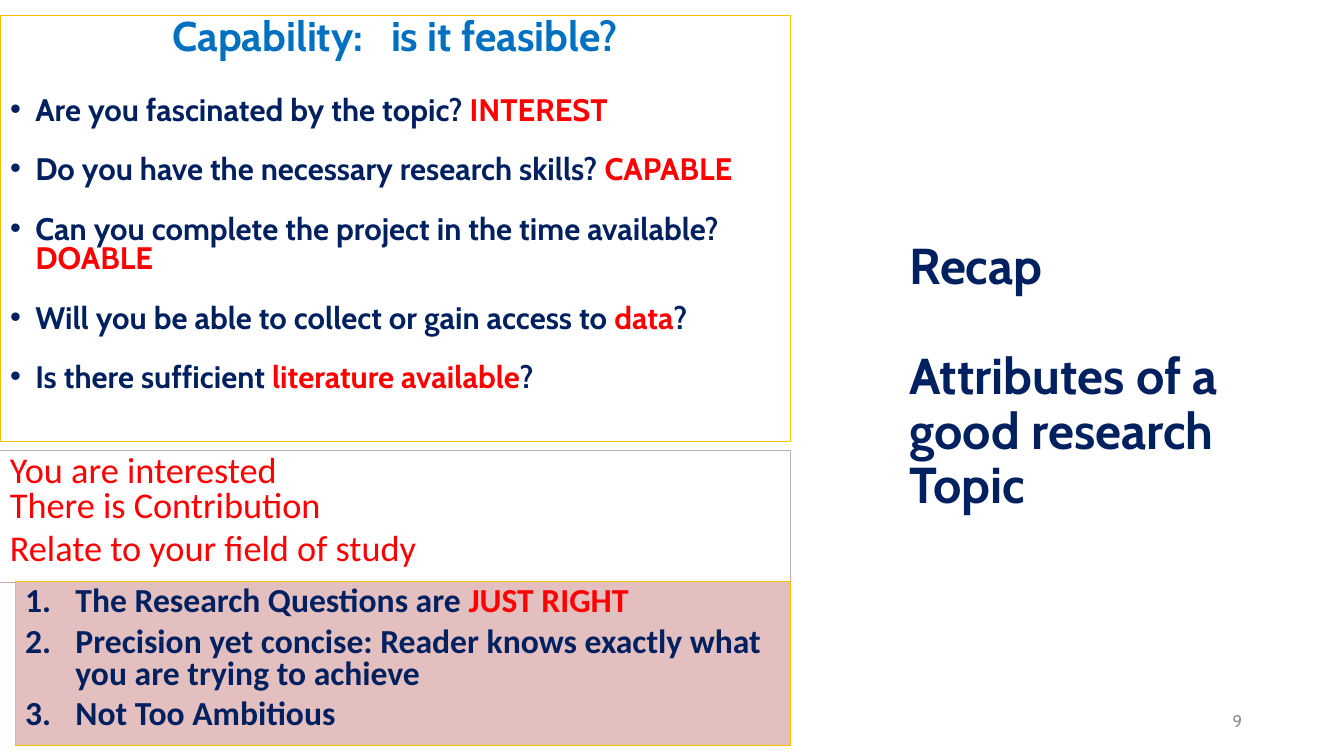
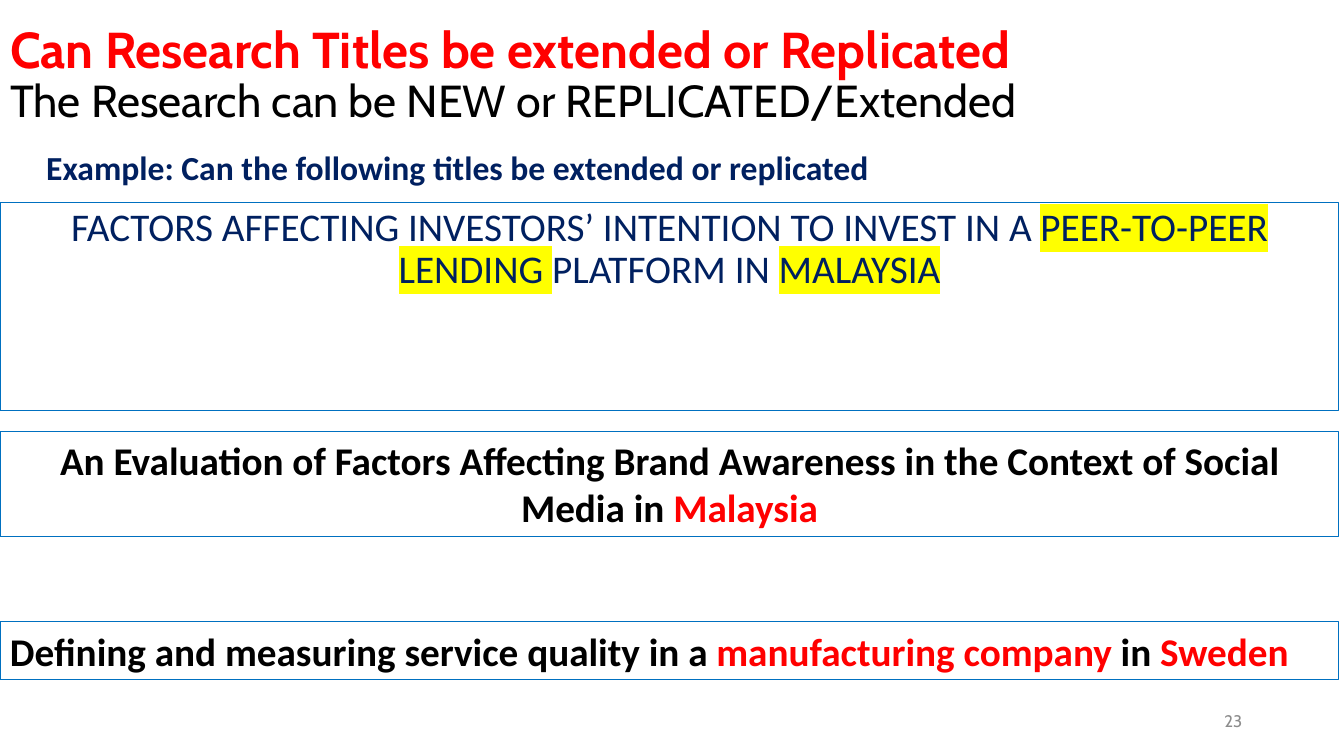
import pptx
import pptx.util
import pptx.dml.color
import pptx.enum.text
import pptx.oxml.ns
import lxml.etree

Inches = pptx.util.Inches
Pt = pptx.util.Pt
RGBColor = pptx.dml.color.RGBColor
Align = pptx.enum.text.PP_ALIGN
Anchor = pptx.enum.text.MSO_ANCHOR

NAVY = RGBColor(0x00, 0x20, 0x60)
BLUE = RGBColor(0x00, 0x70, 0xC0)
RED = RGBColor(0xFF, 0x00, 0x00)
BLACK = RGBColor(0x00, 0x00, 0x00)
WHITE = RGBColor(0xFF, 0xFF, 0xFF)
GOLD = RGBColor(0xFF, 0xC0, 0x00)
MAUVE = RGBColor(0xC6, 0xAD, 0xB0)
PINK = RGBColor(0xE3, 0xC0, 0xBF)
GRAY = RGBColor(0x8C, 0x8C, 0x8C)
YELLOW = "FFFF00"
HEAD = "Cabin"
TEXT = "Calibri"


def tag(parent, name, **attrs):
    return lxml.etree.SubElement(parent, pptx.oxml.ns.qn("a:" + name), **attrs)


def bullet(props, kind, hang):
    props.set("marL", str(Inches(hang)))
    props.set("indent", str(-Inches(hang)))
    if kind == "dot":
        tag(props, "buFont", typeface="Arial")
        tag(props, "buChar", char="•")
    elif kind == "num":
        tag(props, "buFont", typeface="+mj-lt")
        tag(props, "buAutoNum", type="arabicPeriod")
    else:
        tag(props, "buNone")


def write(frame, runs, size, color, font=TEXT, bold=False, align=Align.LEFT,
          line=1.0, before=0, after=0, kind=None, hang=0):
    first = frame.paragraphs[0]
    para = frame.add_paragraph() if first.runs else first
    bullet(para._p.get_or_add_pPr(), kind, hang)
    para.alignment = align
    para.line_spacing = line
    para.space_before = Pt(before)
    para.space_after = Pt(after)
    para.font.name = font
    para.font.size = Pt(size)
    para.font.bold = bold
    para.font.color.rgb = color
    for part in [runs] if isinstance(runs, str) else runs:
        words, mark = (part, None) if isinstance(part, str) else part
        run = para.add_run()
        run.text = words
        if mark == YELLOW:
            light = tag(run._r.get_or_add_rPr(), "highlight")
            tag(light, "srgbClr", val=mark)
        elif mark is not None:
            run.font.color.rgb = mark


def dress(shape, fill=None, line=None, anchor=Anchor.TOP):
    if fill is not None:
        shape.fill.solid()
        shape.fill.fore_color.rgb = fill
    if line is not None:
        shape.line.color.rgb = line
        shape.line.width = Pt(0.75)
    frame = shape.text_frame
    frame.word_wrap = True
    frame.auto_size = pptx.enum.text.MSO_AUTO_SIZE.NONE
    frame.vertical_anchor = anchor
    return frame


def box(slide, area, **look):
    return dress(slide.shapes.add_textbox(*map(Inches, area)), **look)


def place(holder, area, **look):
    holder.left, holder.top, holder.width, holder.height = map(Inches, area)
    return dress(holder, **look)


def start(deck, number):
    slide = deck.slides.add_slide(deck.slide_layouts[1])
    foot = box(slide, (9.42, 6.95, 3, 0.4), anchor=Anchor.MIDDLE)
    write(foot, number, 12, GRAY, HEAD, align=Align.RIGHT)
    return slide, slide.shapes.title, slide.placeholders[1]


def recap(deck):
    slide, title, body = start(deck, "9")
    frame = place(title, (8.92, 0.7, 3.71, 6.1), anchor=Anchor.MIDDLE)
    for words, gap in (("Recap", 0), ("Attributes of a good research Topic", 39.5)):
        write(frame, words, 36, NAVY, HEAD, True, line=0.9, before=gap)

    frame = place(body, (0, 0.15, 7.84, 4.23), fill=WHITE, line=GOLD)
    write(frame, "Capability:   is it feasible?", 29.6, BLUE, HEAD, True,
          Align.CENTER, line=0.8, before=10)
    asks = (
        ["Are you fascinated by the topic? ", ("INTEREST", RED)],
        ["Do you have the necessary research skills? ", ("CAPABLE", RED)],
        ["Can you complete the project in the time available? ", ("DOABLE", RED)],
        ["Will you be able to collect or gain access to ", ("data", RED), "?"],
        ["Is there sufficient ", ("literature available", RED), "?"],
    )
    for row, runs in enumerate(asks):
        write(frame, runs, 22.2, NAVY, HEAD, True, line=0.8,
              before=21 if row else 27, kind="dot", hang=0.25)

    frame = box(slide, (0, 4.47, 7.84, 1.31), line=MAUVE)
    for words, gap in (("You are interested", 0), ("There is Contribution", 6),
                       ("Relate to your field of study", 6)):
        write(frame, words, 25.9, RED, line=0.8, after=gap)

    frame = box(slide, (0.15, 5.77, 7.69, 1.63), fill=PINK, line=GOLD)
    for runs in (
        ["The Research Questions are ", ("JUST RIGHT", RED)],
        "Precision yet concise: Reader knows exactly what you are trying to achieve",
        "Not Too Ambitious",
    ):
        write(frame, runs, 24, NAVY, bold=True, line=0.8, after=6,
              kind="num", hang=0.5)


def extend(deck):
    slide, title, body = start(deck, "23")
    frame = place(title, (0, -0.02, 13.22, 1.55), fill=WHITE, anchor=Anchor.MIDDLE)
    write(frame, "Can Research Titles be extended or Replicated", 36, RED, HEAD,
          True, line=0.9)
    write(frame, "The Research can be NEW or REPLICATED/Extended", 32, BLACK, HEAD,
          line=0.9)

    frame = box(slide, (0.36, 1.41, 12.86, 0.5))
    write(frame, "Example: Can the following titles be extended or replicated",
          24, NAVY, bold=True)

    frame = place(body, (0, 2.01, 13.28, 2.06), line=BLUE)
    write(frame, ["FACTORS AFFECTING INVESTORS’ INTENTION TO INVEST IN A ",
                  ("PEER-TO-PEER LENDING ", YELLOW), "PLATFORM IN ",
                  ("MALAYSIA", YELLOW)],
          28, NAVY, align=Align.CENTER, line=0.9, before=10)

    for top, high, align, runs in (
        (4.28, 1.04, Align.CENTER,
         ["An Evaluation of Factors Affecting Brand Awareness in the Context of "
          "Social Media in ", ("Malaysia", RED)]),
        (6.17, 0.57, Align.LEFT,
         ["Defining and measuring service quality in a ",
          ("manufacturing company ", RED), "in ", ("Sweden", RED)]),
    ):
        frame = box(slide, (0, top, 13.28, high), line=BLUE)
        write(frame, runs, 28, BLACK, bold=True, align=align)


def main():
    deck = pptx.Presentation()
    deck.slide_width = Inches(13.33)
    deck.slide_height = Inches(7.5)
    recap(deck)
    extend(deck)
    deck.save("out.pptx")


if __name__ == "__main__":
    main()
